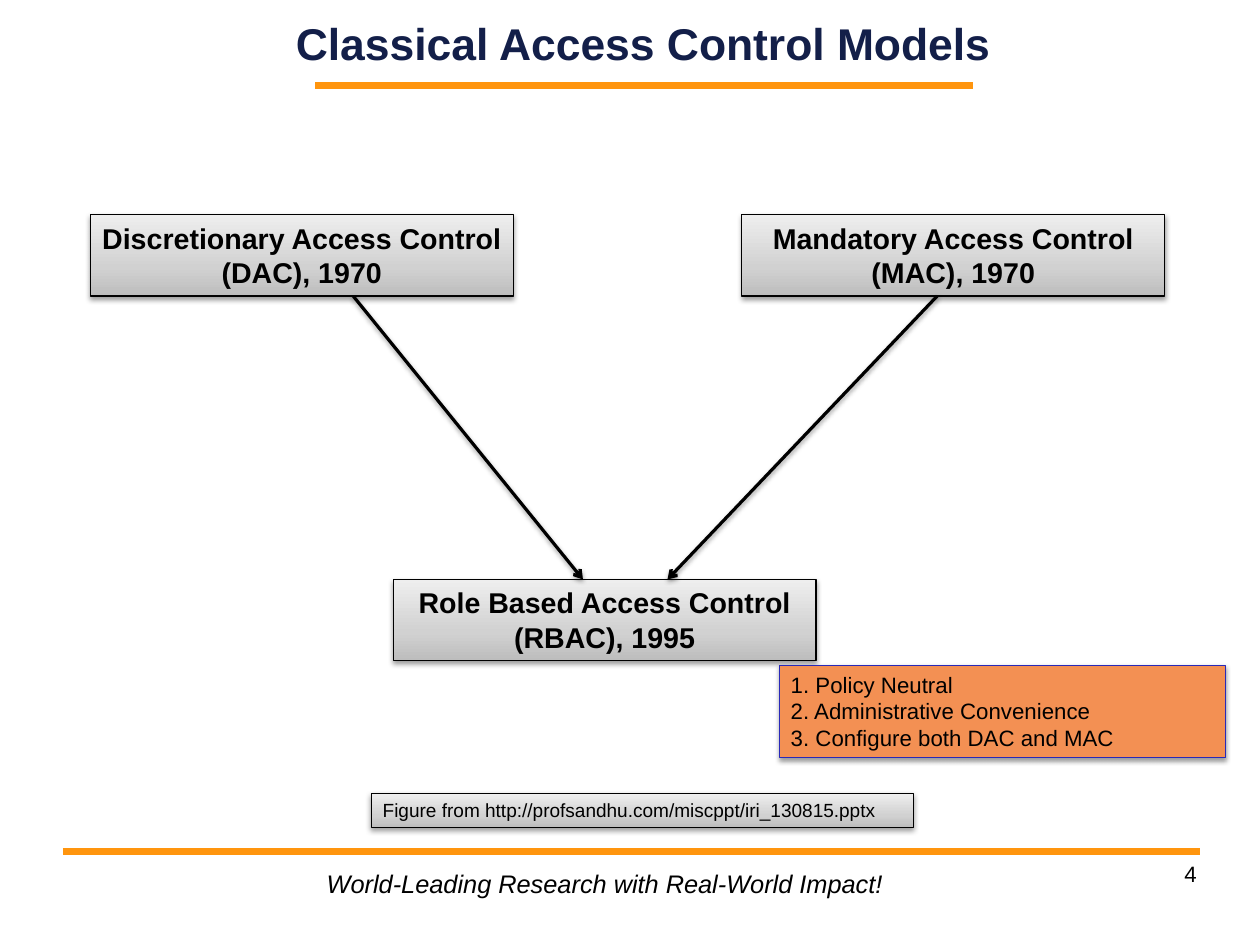
from copy import deepcopy
from dataclasses import dataclass
from typing import Any

import pptx
import pptx.dml.color
import pptx.enum.shapes
import pptx.enum.text
import pptx.oxml
import pptx.oxml.ns
import pptx.util

Inches = pptx.util.Inches
Pt = pptx.util.Pt
Align = pptx.enum.text.PP_ALIGN
Anchor = pptx.enum.text.MSO_ANCHOR
qn = pptx.oxml.ns.qn

CM_PER_INCH = 2.54
PAGE_WIDTH = 28 / CM_PER_INCH
PAGE_HEIGHT = 21 / CM_PER_INCH


@dataclass(frozen=True)
class Theme:
    font: str = "Arial"
    ink: str = "000000"
    title: str = "131F49"
    rule: str = "FF950E"
    benefit_fill: str = "F39053"
    benefit_edge: str = "2929B8"
    gradient: tuple = ((0, "BDBDBD"), (0.35, "D1D1D1"), (1, "EEEEEE"))
    title_size: int = 28
    model_size: int = 18
    tagline_size: int = 16
    body_size: int = 14
    source_size: int = 12
    edge_width: float = 0.75
    arrow_width: float = 2
    rule_width: float = 4.31


THEME = Theme()


@dataclass(frozen=True)
class Label:
    lines: tuple[str, ...]
    left: float
    top: float
    width: float
    height: float
    size: int
    color: str = THEME.ink
    bold: bool = False
    italic: bool = False
    align: Any = Align.LEFT
    anchor: Any = Anchor.TOP
    wrap: bool = True
    inset: bool = True


@dataclass(frozen=True)
class Panel:
    label: Label
    edge: str = THEME.ink
    fill: str | None = None


@dataclass(frozen=True)
class Stroke:
    start: tuple[float, float]
    end: tuple[float, float]
    color: str
    width: float
    arrow: bool = False


def rgb(code: str) -> pptx.dml.color.RGBColor:
    return pptx.dml.color.RGBColor.from_string(code)


def add_effects(properties: Any, shadow: bool) -> None:
    content = (
        '<a:outerShdw blurRad="40000" dist="20000" dir="5400000" rotWithShape="0">'
        f'<a:srgbClr val="{THEME.ink}"><a:alpha val="38000"/></a:srgbClr></a:outerShdw>'
    )
    properties.append(pptx.oxml.parse_xml(
        f'<a:effectLst {pptx.oxml.ns.nsdecls("a")}>{content if shadow else ""}</a:effectLst>'
    ))


def write_label(frame: Any, label: Label) -> None:
    frame.word_wrap = label.wrap
    frame.vertical_anchor = label.anchor
    if not label.inset:
        frame.margin_left = frame.margin_right = 0
        frame.margin_top = frame.margin_bottom = 0
    frame.text = "\n".join(label.lines)
    for paragraph in frame.paragraphs:
        paragraph.alignment = label.align
        paragraph.font.name = THEME.font
        paragraph.font.size = Pt(label.size)
        paragraph.font.bold = label.bold
        paragraph.font.italic = label.italic
        paragraph.font.color.rgb = rgb(label.color)


def bounds(label: Label) -> tuple:
    return tuple(map(Inches, (label.left, label.top, label.width, label.height)))


def add_label(slide: Any, label: Label) -> None:
    write_label(slide.shapes.add_textbox(*bounds(label)).text_frame, label)


def apply_gradient(fill: Any, properties: Any) -> None:
    fill.gradient()
    fill.gradient_angle = 90
    stops = properties.find(qn("a:gradFill")).find(qn("a:gsLst"))
    stops.append(deepcopy(stops[-1]))
    for stop, (position, color) in zip(fill.gradient_stops, THEME.gradient):
        stop.position = position
        stop.color.rgb = rgb(color)


def add_panel(slide: Any, panel: Panel) -> None:
    box = slide.shapes.add_shape(
        pptx.enum.shapes.MSO_SHAPE.RECTANGLE, *bounds(panel.label)
    )
    properties = box._element.spPr
    if panel.fill:
        box.fill.solid()
        box.fill.fore_color.rgb = rgb(panel.fill)
    else:
        apply_gradient(box.fill, properties)
    box.line.color.rgb = rgb(panel.edge)
    box.line.width = Pt(THEME.edge_width)
    add_effects(properties, shadow=True)
    write_label(box.text_frame, panel.label)


def add_stroke(slide: Any, stroke: Stroke) -> None:
    connector = slide.shapes.add_connector(
        pptx.enum.shapes.MSO_CONNECTOR.STRAIGHT,
        *map(Inches, (*stroke.start, *stroke.end)),
    )
    connector.line.color.rgb = rgb(stroke.color)
    connector.line.width = Pt(stroke.width)
    properties = connector._element.spPr
    if stroke.arrow:
        properties.find(qn("a:ln")).append(pptx.oxml.parse_xml(
            f'<a:tailEnd {pptx.oxml.ns.nsdecls("a")} type="arrow"/>'
        ))
    add_effects(properties, shadow=stroke.arrow)


def model(name: str, left: float, top: float) -> Panel:
    return Panel(Label((name,), left, top, 3.7, 0.71, THEME.model_size,
                       bold=True, align=Align.CENTER))


RULES = [
    Stroke((2.76, 0.75), (8.51, 0.75), THEME.rule, THEME.rule_width),
    Stroke((0.55, 7.45), (10.5, 7.45), THEME.rule, THEME.rule_width),
]
LABELS = [
    Label(("4",), 7.9, 7.53, 2.57, 0.57, THEME.body_size,
          align=Align.RIGHT, inset=False),
    Label(("World-Leading Research with Real-World Impact!",), 2.76, 7.55, 5.08, 0.37,
          THEME.tagline_size, italic=True, wrap=False),
    Label(("Classical Access Control Models",), 2.41, 0, 6.43, 0.75, THEME.title_size,
          THEME.title, bold=True, align=Align.CENTER, anchor=Anchor.MIDDLE, inset=False),
]
PANELS = [
    model("Discretionary Access Control (DAC), 1970", 0.79, 1.88),
    model("Mandatory Access Control (MAC), 1970", 6.49, 1.88),
    model("Role Based Access Control (RBAC), 1995", 3.44, 5.07),
    Panel(Label(("Figure from http://profsandhu.com/miscppt/iri_130815.pptx",),
                3.25, 6.94, 4.74, 0.3, THEME.source_size)),
    Panel(Label(("1. Policy Neutral", "2. Administrative Convenience",
                 "3. Configure both DAC and MAC"),
                6.82, 5.82, 3.9, 0.81, THEME.body_size),
          THEME.benefit_edge, THEME.benefit_fill),
]
INFLUENCES = [
    Stroke((3.09, 2.59), (5.1, 5.07), THEME.ink, THEME.arrow_width, arrow=True),
    Stroke((8.2, 2.59), (5.84, 5.07), THEME.ink, THEME.arrow_width, arrow=True),
]


def main() -> None:
    deck = pptx.Presentation()
    deck.slide_width = Inches(PAGE_WIDTH)
    deck.slide_height = Inches(PAGE_HEIGHT)
    slide = deck.slides.add_slide(deck.slide_layouts[6])
    for rule in RULES:
        add_stroke(slide, rule)
    for label in LABELS:
        add_label(slide, label)
    for panel in PANELS:
        add_panel(slide, panel)
    for influence in INFLUENCES:
        add_stroke(slide, influence)
    deck.save("out.pptx")


if __name__ == "__main__":
    main()
